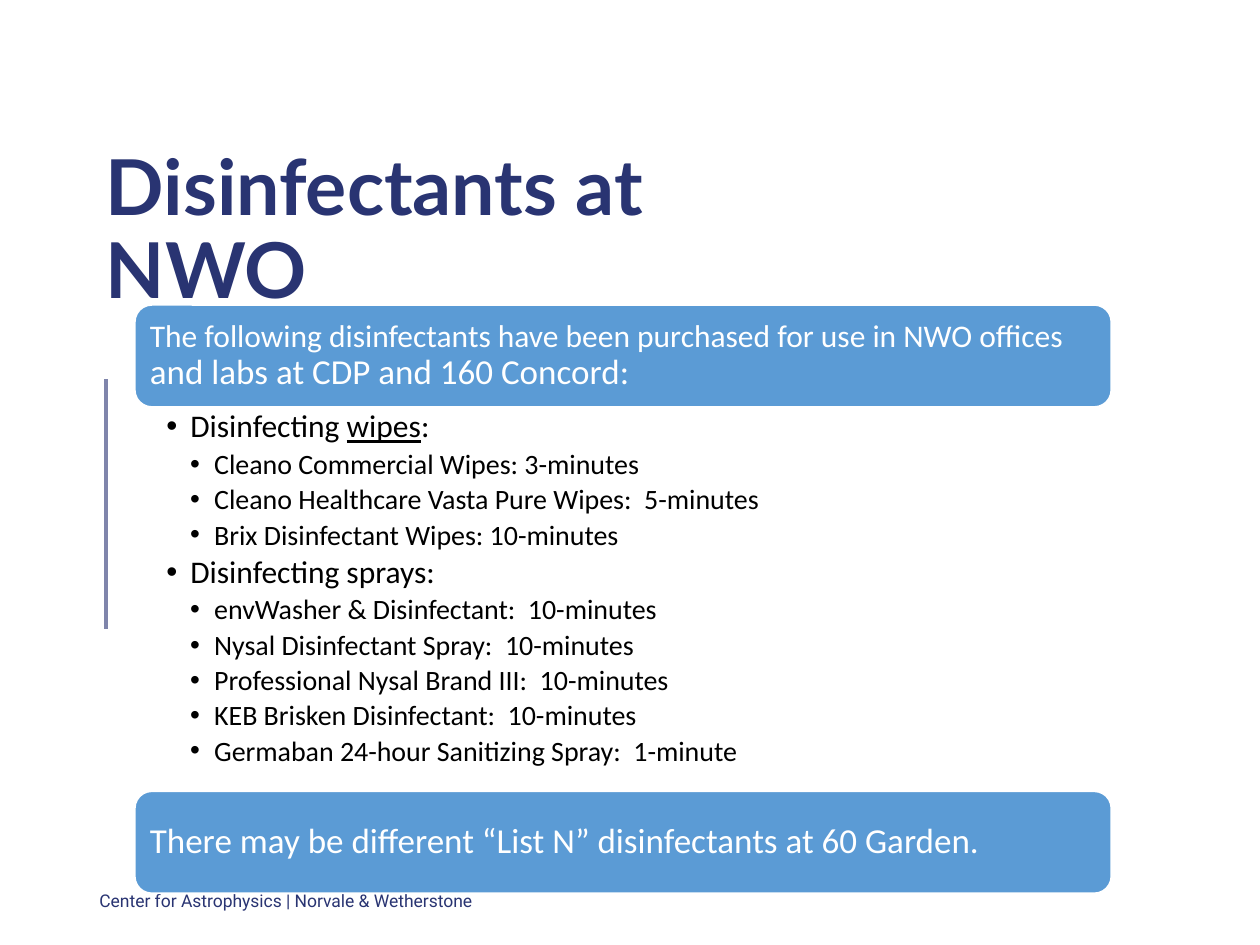
from dataclasses import dataclass

from lxml import etree
from pptx import Presentation
from pptx.dml.color import RGBColor
from pptx.enum.shapes import MSO_CONNECTOR, MSO_SHAPE
from pptx.enum.text import MSO_ANCHOR, MSO_AUTO_SIZE, PP_ALIGN
from pptx.oxml.ns import qn
from pptx.util import Emu, Inches, Pt

ROUNDED = MSO_SHAPE.ROUNDED_RECTANGLE
STRAIGHT = MSO_CONNECTOR.STRAIGHT
TOP, MIDDLE, BOTTOM = MSO_ANCHOR.TOP, MSO_ANCHOR.MIDDLE, MSO_ANCHOR.BOTTOM
LEFT = PP_ALIGN.LEFT
FIXED = MSO_AUTO_SIZE.NONE

NAVY = RGBColor(0x29, 0x34, 0x72)
LAVENDER = RGBColor(0x7F, 0x85, 0xAB)
BLUE = RGBColor(0x5B, 0x9B, 0xD5)
WHITE = RGBColor(0xFF, 0xFF, 0xFF)
BLACK = RGBColor(0x00, 0x00, 0x00)

TITLE_ONLY = 5
GRID_UNIT = Inches(0.1)
BULLET_STEP = 1.9
SPACE_SHARE = 0.18


@dataclass(frozen=True)
class Span:
    text: str
    size: int
    font: str = "Calibri"
    color: RGBColor = BLACK
    bold: bool = False
    underline: bool = False


@dataclass(frozen=True)
class Area:
    column: float
    row: float
    columns: float
    rows: float

    def bounds(self) -> tuple:
        return tuple(grid(n) for n in (self.column, self.row, self.columns, self.rows))


@dataclass(frozen=True)
class Banner:
    row: float
    spans: tuple


@dataclass(frozen=True)
class Group:
    heading: tuple
    items: tuple


TITLE_AREA = Area(7.4, 5.8, 52.4, 19.7)
FOOTER_AREA = Area(6.9, 69.5, 33.8, 4)
LIST_AREA = Area(10.7, 32.3, 77.5, 30.5)
BANNER_ROWS = 8.1

BANNERS = (
    Banner(24.2, (
        Span("The following disinfectants have been purchased for use in NWO offices ", 18, color=WHITE),
        Span("and labs at CDP and 160 Concord:", 20, color=WHITE),
    )),
    Banner(62.8, (
        Span("There may be different “List N” disinfectants at 60 Garden.", 20, color=WHITE),
    )),
)

GROUPS = (
    Group(
        (Span("Disinfecting ", 18), Span("wipes", 18, underline=True), Span(":", 18)),
        (
            "Cleano Commercial Wipes: 3-minutes",
            "Cleano Healthcare Vasta Pure Wipes:  5-minutes",
            "Brix Disinfectant Wipes: 10-minutes",
        ),
    ),
    Group(
        (Span("Disinfecting sprays:", 18),),
        (
            "envWasher & Disinfectant:  10-minutes",
            "Nysal Disinfectant Spray:  10-minutes",
            "Professional Nysal Brand III:  10-minutes",
            "KEB Brisken Disinfectant:  10-minutes",
            "Germaban 24-hour Sanitizing Spray:  1-minute",
        ),
    ),
)


def grid(units: float) -> Emu:
    return Emu(round(units * GRID_UNIT))


def set_frame(frame, anchor, insets: tuple) -> None:
    frame.word_wrap = True
    frame.auto_size = FIXED
    frame.vertical_anchor = anchor
    left, top, right, bottom = insets
    frame.margin_left, frame.margin_top = grid(left), grid(top)
    frame.margin_right, frame.margin_bottom = grid(right), grid(bottom)


def add_spans(para, spans: tuple, line_spacing: float = 0.9) -> None:
    para.alignment = LEFT
    para.line_spacing = line_spacing
    for item in spans:
        span = para.add_run()
        span.text = item.text
        span.font.size = Pt(item.size)
        span.font.name = item.font
        span.font.color.rgb = item.color
        span.font.bold = item.bold
        span.font.underline = item.underline


def add_bullet(para, level: int) -> None:
    properties = para._p.get_or_add_pPr()
    properties.set("marL", str(grid(BULLET_STEP * level)))
    properties.set("indent", str(-grid(BULLET_STEP)))
    etree.SubElement(properties, qn("a:buFont")).set("typeface", "Arial")
    etree.SubElement(properties, qn("a:buChar")).set("char", "•")


def draw_title(page) -> None:
    title = page.shapes.title
    title.left, title.top, title.width, title.height = TITLE_AREA.bounds()
    set_frame(title.text_frame, BOTTOM, (1, 0.5, 1, 0.5))
    span = Span("Disinfectants at NWO", 44, "Lato", NAVY, bold=True)
    add_spans(title.text_frame.paragraphs[0], (span,))


def draw_footer(page) -> None:
    box = page.shapes.add_textbox(*FOOTER_AREA.bounds())
    set_frame(box.text_frame, MIDDLE, (1, 0.5, 1, 0.5))
    span = Span("Center for Astrophysics | Norvale & Wetherstone", 10, "Roboto", NAVY)
    add_spans(box.text_frame.paragraphs[0], (span,), 1.0)


def draw_side_rule(page) -> None:
    rule = page.shapes.add_connector(STRAIGHT, grid(8.4), grid(30.1), grid(8.4), grid(49.9))
    rule.line.color.rgb = LAVENDER
    rule.line.width = Pt(2)
    etree.SubElement(rule._element.spPr, qn("a:effectLst"))


def draw_banner(page, banner: Banner) -> None:
    area = Area(LIST_AREA.column, banner.row, LIST_AREA.columns, BANNER_ROWS)
    box = page.shapes.add_shape(ROUNDED, *area.bounds())
    box.shadow.inherit = False
    box.fill.solid()
    box.fill.fore_color.rgb = BLUE
    box.line.color.rgb = WHITE
    box.line.width = Pt(1)
    set_frame(box.text_frame, MIDDLE, (0.8, 0.8, 0.8, 0.8))
    add_spans(box.text_frame.paragraphs[0], banner.spans)


def draw_list(page, groups: tuple) -> None:
    box = page.shapes.add_textbox(*LIST_AREA.bounds())
    frame = box.text_frame
    set_frame(frame, TOP, (2.5, 0.3, 1.4, 0.3))
    entries = []
    for group in groups:
        entries.append((1, group.heading))
        entries.extend((2, (Span(item, 16),)) for item in group.items)
    for index, (level, spans) in enumerate(entries):
        para = frame.add_paragraph() if index else frame.paragraphs[0]
        para.level = level
        para.space_before = Pt(0)
        para.space_after = Pt(round(spans[0].size * SPACE_SHARE, 1))
        add_spans(para, spans)
        add_bullet(para, level)


def main() -> None:
    deck = Presentation()
    deck.slide_width, deck.slide_height = grid(100), grid(75)
    page = deck.slides.add_slide(deck.slide_layouts[TITLE_ONLY])
    draw_title(page)
    draw_footer(page)
    draw_side_rule(page)
    for banner in BANNERS:
        draw_banner(page, banner)
    draw_list(page, GROUPS)
    deck.save("out.pptx")


if __name__ == "__main__":
    main()
